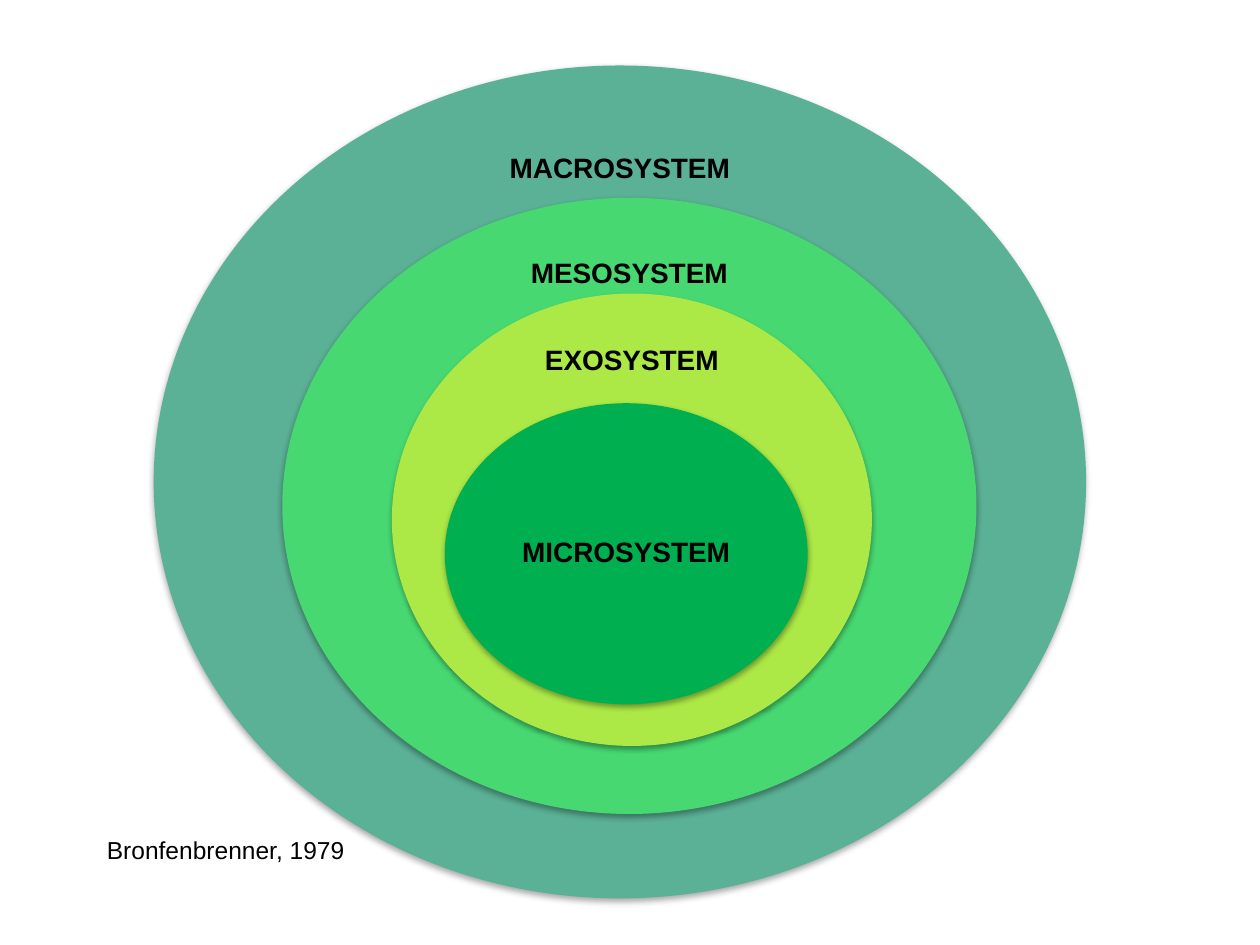
from typing import NamedTuple

from lxml.etree import SubElement
from pptx import Presentation
from pptx.dml.color import RGBColor
from pptx.enum.shapes import MSO_SHAPE as Shape
from pptx.enum.text import MSO_ANCHOR as Anchor, PP_ALIGN as Align
from pptx.oxml.ns import qn
from pptx.util import Pt

PX = 9144
PAGE_WIDTH, PAGE_HEIGHT = 1000, 750
FONT = "Arial"
LABEL_INSET = 12

BLACK = RGBColor(0x00, 0x00, 0x00)
TEAL = RGBColor(0x5B, 0xB1, 0x96)
MINT = RGBColor(0x47, 0xD8, 0x72)
LIME = RGBColor(0xAC, 0xE9, 0x46)
GREEN = RGBColor(0x00, 0xB0, 0x50)


class Box(NamedTuple):
    """A rectangle in px."""
    left: int
    top: int
    width: int
    height: int

    def emu(self):
        """Return the four lengths in EMU."""
        return [round(length * PX) for length in self]


class Ring(NamedTuple):
    """One system: its ellipse, colour, and label placed below the ellipse's top."""
    name: str
    color: RGBColor
    box: Box
    label_drop: int
    label_width: int
    label_height: int


RINGS = [
    Ring("MACROSYSTEM", TEAL, Box(122, 52, 740, 661), 33, 207, 99),
    Ring("MESOSYSTEM", MINT, Box(224, 157, 551, 489), 30, 193, 62),
    Ring("EXOSYSTEM", LIME, Box(311, 233, 381, 359), 27, 177, 54),
    Ring("MICROSYSTEM", GREEN, Box(353, 320, 288, 239), 60, 204, 119),
]


def add_soft_shadow(shape):
    """Give the shape a soft shadow that falls straight down."""
    shape.shadow.inherit = False
    effects = shape.element.spPr.find(qn("a:effectLst"))
    shadow = SubElement(effects, qn("a:outerShdw"), blurRad="40000",
                        dist="23000", dir="5400000", rotWithShape="0")
    color = SubElement(shadow, qn("a:srgbClr"), val=str(BLACK))
    SubElement(color, qn("a:alpha"), val="35000")


def add_text(page, box, text, size, bold=False):
    """Place one line of text in the box and return its frame."""
    frame = page.shapes.add_textbox(*box.emu()).text_frame
    para = frame.paragraphs[0]
    para.text = text
    para.font.name = FONT
    para.font.size = Pt(size)
    para.font.bold = bold
    para.font.color.rgb = BLACK
    return frame


def add_ring(page, ring):
    """Draw the ellipse of one system with its centred label."""
    box = ring.box
    ellipse = page.shapes.add_shape(Shape.OVAL, *box.emu())
    ellipse.fill.solid()
    ellipse.fill.fore_color.rgb = ring.color
    ellipse.line.fill.background()
    add_soft_shadow(ellipse)

    label = Box(box.left + (box.width - ring.label_width) / 2,
                box.top + ring.label_drop, ring.label_width, ring.label_height)
    frame = add_text(page, label, ring.name, 16, bold=True)
    frame.word_wrap = True
    frame.vertical_anchor = Anchor.MIDDLE
    frame.margin_left = frame.margin_right = LABEL_INSET * PX
    frame.margin_top = frame.margin_bottom = LABEL_INSET * PX
    frame.paragraphs[0].alignment = Align.CENTER
    frame.paragraphs[0].line_spacing = 0.9


def add_citation(page, box):
    """Write the source of the model."""
    add_text(page, box, "Bronfenbrenner, 1979", 14).word_wrap = False


def main():
    """Build and save the deck."""
    deck = Presentation()
    deck.slide_width, deck.slide_height = PAGE_WIDTH * PX, PAGE_HEIGHT * PX
    page = deck.slides.add_slide(deck.slide_layouts[6])
    for ring in RINGS:
        add_ring(page, ring)
    add_citation(page, Box(75, 658, 209, 34))
    deck.save("out.pptx")


if __name__ == "__main__":
    main()
